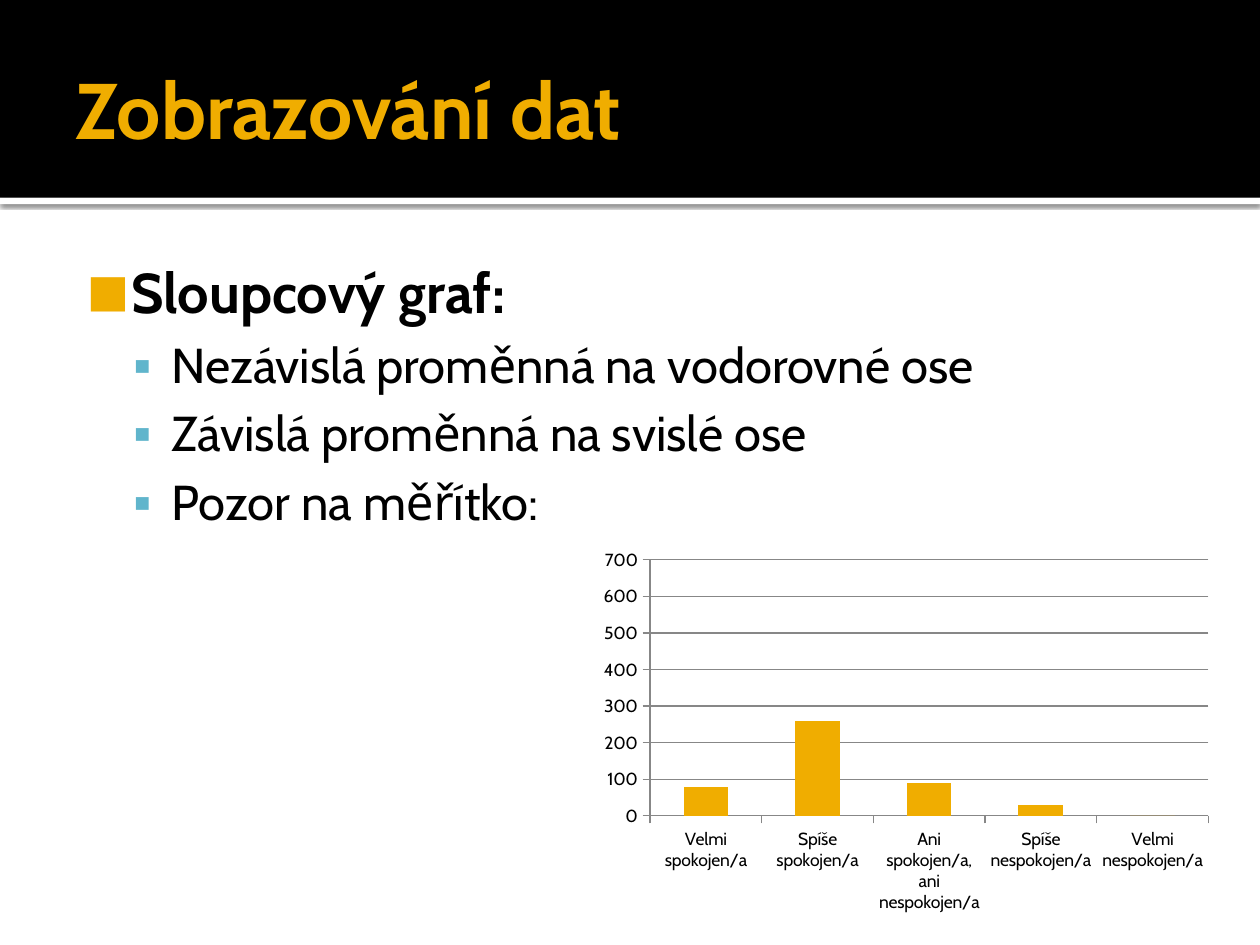
from dataclasses import dataclass
from typing import Any

import lxml.etree
import pptx
import pptx.chart.data
import pptx.dml.color
import pptx.enum.chart
import pptx.enum.shapes
import pptx.enum.text
import pptx.oxml.ns
import pptx.util

COLORS = {"gold": "F0AD00", "sky": "60B5CC", "ink": "000000", "paper": "FFFFFF", "rule": "878787"}
FONT = "Cabin"
WIDTH, HEIGHT = 10, 7.5
BAND_HEIGHT = 1.57


@dataclass(frozen=True)
class Area:
    left: float
    top: float
    width: float
    height: float

    def emu(self) -> list[int]:
        return [pptx.util.Inches(v) for v in (self.left, self.top, self.width, self.height)]


@dataclass(frozen=True)
class Level:
    size: int
    bold: bool
    margin: float
    hanging: float
    before: float
    bullet: str
    bullet_color: str
    bullet_percent: int


@dataclass(frozen=True)
class Item:
    text: str
    level: int


LEVELS = (
    Level(32, True, 0.48, 0.35, 0, "■", "gold", 80),
    Level(28, False, 0.8, 0.3, 5.6, "▪", "sky", 90),
)
ITEMS = (
    Item("Sloupcový graf:", 0),
    Item("Nezávislá proměnná na vodorovné ose", 1),
    Item("Závislá proměnná na svislé ose", 1),
    Item("Pozor na měřítko:", 1),
)
ANSWERS = {
    "Velmi spokojen/a": 80,
    "Spíše spokojen/a": 260,
    "Ani spokojen/a, ani nespokojen/a": 90,
    "Spíše nespokojen/a": 30,
    "Velmi nespokojen/a": 0,
}


def rgb(name: str) -> pptx.dml.color.RGBColor:
    return pptx.dml.color.RGBColor.from_string(COLORS[name])


def apply(target: Any, formats: dict[str, Any]) -> None:
    for name, value in formats.items():
        setattr(target, name, value)


def child(parent: Any, tag: str, **attributes: str) -> Any:
    return lxml.etree.SubElement(parent, pptx.oxml.ns.qn(tag), attributes)


def format_font(font: Any, size: float, color: str, bold: bool = False) -> None:
    apply(font, {"name": FONT, "size": pptx.util.Pt(size), "bold": bold})
    font.color.rgb = rgb(color)


def draw_band(slide: Any, area: Area, color: str, depth: int) -> Any:
    band = slide.shapes.add_shape(pptx.enum.shapes.MSO_SHAPE.RECTANGLE, *area.emu())
    band.shadow.inherit = False
    band.fill.solid()
    band.fill.fore_color.rgb = rgb(color)
    band.line.fill.background()
    slide.shapes.element.insert(depth, band.element)
    return band


def cast_shadow(band: Any) -> None:
    effects = band.element.spPr.find(pptx.oxml.ns.qn("a:effectLst"))
    shadow = child(effects, "a:outerShdw", blurRad=str(pptx.util.Pt(2.5)),
                   dist=str(pptx.util.Pt(0.8)), dir="5400000", algn="tl", rotWithShape="0")
    child(child(shadow, "a:srgbClr", val=COLORS["ink"]), "a:alpha", val="60000")


def place_text(placeholder: Any, area: Area, insets: tuple[float, ...], anchor: Any) -> Any:
    apply(placeholder, dict(zip(("left", "top", "width", "height"), area.emu())))
    sides = ("margin_left", "margin_top", "margin_right", "margin_bottom")
    frame = placeholder.text_frame
    apply(frame, dict(zip(sides, map(pptx.util.Inches, insets))))
    apply(frame, {"word_wrap": True, "vertical_anchor": anchor,
                  "auto_size": pptx.enum.text.MSO_AUTO_SIZE.NONE})
    return frame


def write_item(paragraph: Any, item: Item) -> None:
    level = LEVELS[item.level]
    properties = paragraph._p.get_or_add_pPr()
    properties.set("marL", str(pptx.util.Inches(level.margin)))
    properties.set("indent", str(-pptx.util.Inches(level.hanging)))
    child(child(properties, "a:buClr"), "a:srgbClr", val=COLORS[level.bullet_color])
    child(properties, "a:buSzPct", val=str(level.bullet_percent * 1000))
    child(properties, "a:buFont", typeface=FONT)
    child(properties, "a:buChar", char=level.bullet)
    apply(paragraph, {"level": item.level, "space_before": pptx.util.Pt(level.before),
                      "alignment": pptx.enum.text.PP_ALIGN.LEFT})
    run = paragraph.add_run()
    run.text = item.text
    format_font(run.font, level.size, "ink", level.bold)


def draw_answers(slide: Any, area: Area) -> None:
    data = pptx.chart.data.CategoryChartData(number_format="###0")
    data.categories = list(ANSWERS)
    data.add_series("Series 1", list(ANSWERS.values()))
    chart = slide.shapes.add_chart(
        pptx.enum.chart.XL_CHART_TYPE.COLUMN_CLUSTERED, *area.emu(), data).chart
    apply(chart, {"has_legend": False, "has_title": False})
    format_font(chart.font, 10, "ink")
    plot = chart.plots[0]
    apply(plot, {"vary_by_categories": False, "gap_width": 150})
    bars = plot.series[0].format.fill
    bars.solid()
    bars.fore_color.rgb = rgb("gold")
    apply(chart.value_axis, {"minimum_scale": 0, "maximum_scale": 700, "major_unit": 100,
                             "has_major_gridlines": True})
    apply(chart.value_axis.tick_labels, {"number_format": "###0", "number_format_is_linked": False})
    for axis in (chart.category_axis, chart.value_axis):
        axis.major_tick_mark = pptx.enum.chart.XL_TICK_MARK.OUTSIDE
    for ruled in (chart.category_axis, chart.value_axis, chart.value_axis.major_gridlines):
        ruled.format.line.color.rgb = rgb("rule")
        ruled.format.line.width = pptx.util.Pt(0.75)


def main() -> None:
    """Build the slide on displaying data with a column chart."""
    deck = pptx.Presentation()
    apply(deck, {"slide_width": pptx.util.Inches(WIDTH), "slide_height": pptx.util.Inches(HEIGHT)})
    slide = deck.slides.add_slide(deck.slide_layouts[1])
    slide.background.fill.solid()
    slide.background.fill.fore_color.rgb = rgb("paper")
    cast_shadow(draw_band(slide, Area(0, BAND_HEIGHT, WIDTH, 0.05), "paper", 2))
    draw_band(slide, Area(0, 0, WIDTH, BAND_HEIGHT), "ink", 3)

    margin = WIDTH / 20
    column = WIDTH - 2 * margin
    heading = place_text(slide.shapes.title, Area(margin, 0.17, column, 1.37),
                         (0.1, 0.05, 0.05, 0.05), pptx.enum.text.MSO_ANCHOR.MIDDLE).paragraphs[0]
    heading.alignment = pptx.enum.text.PP_ALIGN.LEFT
    heading_run = heading.add_run()
    heading_run.text = "Zobrazování dat"
    format_font(heading_run.font, 45, "gold", True)

    points = place_text(slide.placeholders[1], Area(margin, 1.94, column, 5.27),
                        (0.06, 0.1, 0.1, 0.05), pptx.enum.text.MSO_ANCHOR.TOP)
    for number, item in enumerate(ITEMS):
        write_item(points.add_paragraph() if number else points.paragraphs[0], item)
    draw_answers(slide, Area(4.69, 4.3, WIDTH / 2, HEIGHT * 0.4))
    deck.save("out.pptx")


if __name__ == "__main__":
    main()
